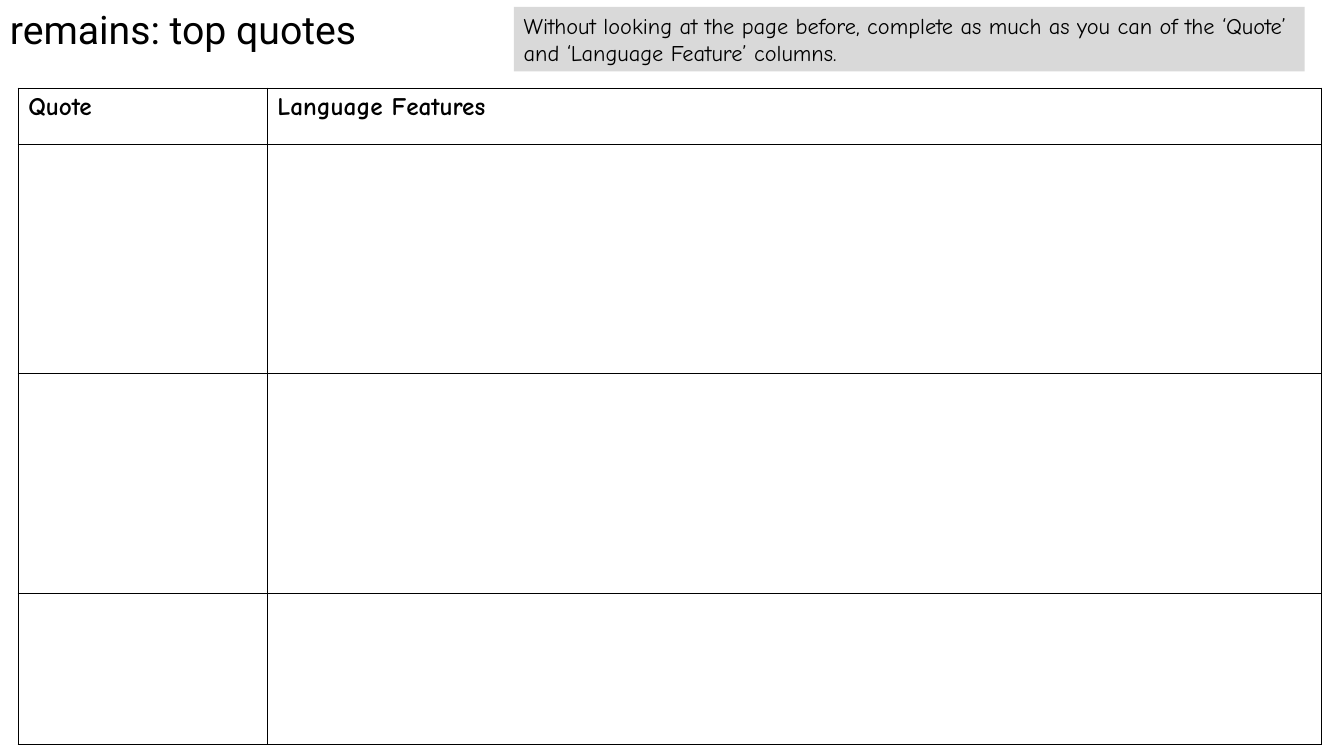
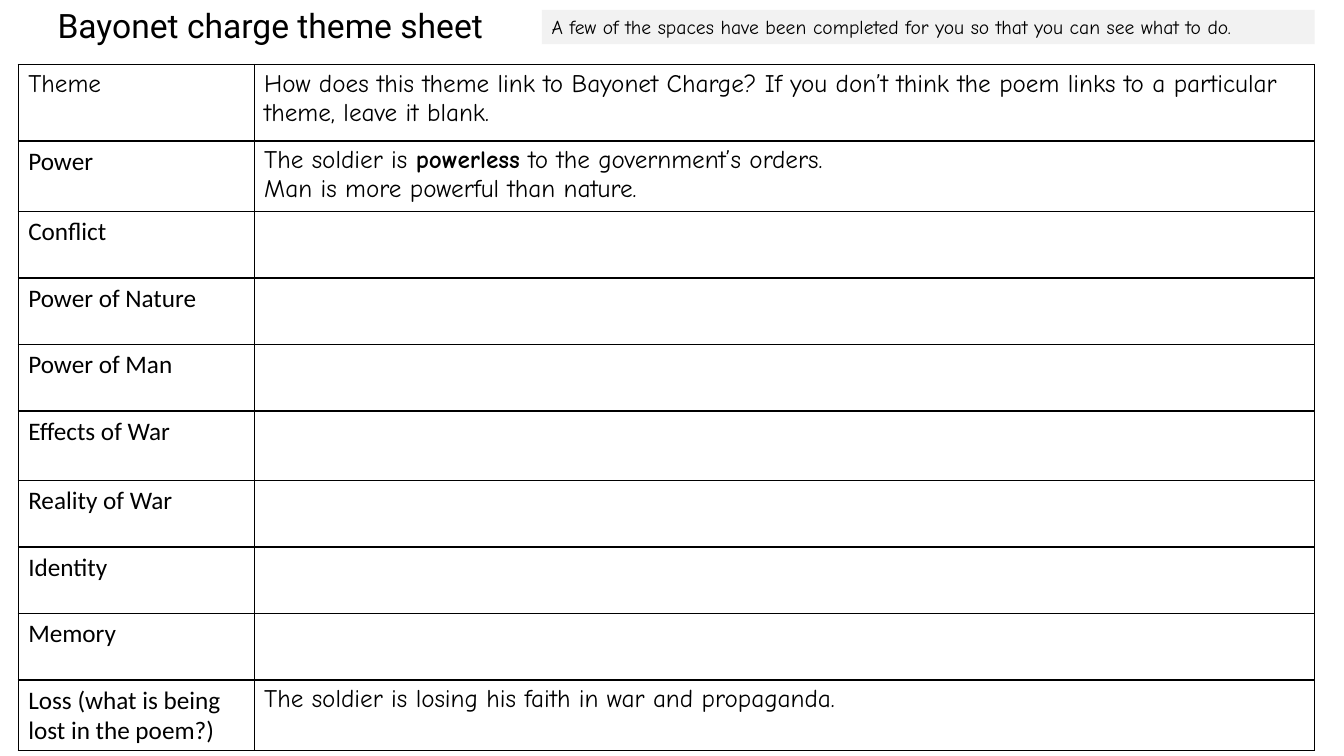
from itertools import product
from lxml.etree import SubElement
from pptx import Presentation
from pptx.dml.color import RGBColor
from pptx.enum.shapes import MSO_SHAPE as Shape
from pptx.enum.text import MSO_ANCHOR as Anchor, PP_ALIGN as Align
from pptx.oxml.ns import qn
from pptx.util import Pt

HAND, PLAIN, TITLE = "Comic Neue", "Calibri", "Roboto"
BLACK = "000000"
TABLE_LEFT, TABLE_SIZE = 13, 18

# Content: asterisks enclose bold words, a line break starts a paragraph
THEME_ROWS = [
    ("Theme", "How does this theme link to Bayonet Charge? If you don’t think "
     "the poem links to a particular theme, leave it blank."),
    ("Power", "The soldier is *powerless* to the government’s orders.\n"
     "Man is more powerful than nature."),
    ("Conflict", ""),
    ("Power of Nature", ""),
    ("Power of Man", ""),
    ("Effects of War", ""),
    ("Reality of War", ""),
    ("Identity", ""),
    ("Memory", ""),
    ("Loss (what is being lost in the poem?)",
     "The soldier is losing his faith in war and propaganda."),
]
SHEETS = [
    dict(title="remains: top quotes", title_box=(0, 0, 360, 41),
         title_size=28, title_align=Align.LEFT,
         note="Without looking at the page before, complete as much as you can "
              "of the ‘Quote’ and ‘Language Feature’ columns.",
         note_box=(367, 5, 565, 46), note_size=16, note_fill="D9D9D9",
         rows=[("*Quote*", "*Language Features*")] + [("", "")] * 3,
         top=63, widths=(178, 753), heights=(40, 164, 157, 108),
         label_font=HAND),
    dict(title="Bayonet charge theme sheet", title_box=(0, 0, 386, 36),
         title_size=24, title_align=Align.CENTER,
         note="A few of the spaces have been completed for you so that you can "
              "see what to do.",
         note_box=(387, 7, 552, 24.5), note_size=14, note_fill="F2F2F2",
         rows=THEME_ROWS,
         top=46, widths=(168.5, 757.5),
         heights=[54.7, 50.4] + [47.5] * 3 + [49.7] + [47.5] * 3 + [49.7],
         label_font=PLAIN),
]


def color(value):
    return RGBColor.from_string(value)


def write(frame, text, font, size, align=Align.LEFT):
    frame.word_wrap = True
    frame.text = ""
    for number, line in enumerate(text.split("\n")):
        para = frame.add_paragraph() if number else frame.paragraphs[0]
        para.alignment = align
        para.font.size = Pt(size)
        for index, words in enumerate(line.split("*")):
            if words:
                span = para.add_run()
                span.text = words
                span.font.name, span.font.size = font, Pt(size)
                span.font.bold = index % 2 == 1
                span.font.color.rgb = color(BLACK)


def add_borders(cell):
    properties = cell._tc.get_or_add_tcPr()
    for position, side in enumerate(("lnL", "lnR", "lnT", "lnB")):
        line = properties.makeelement(qn(f"a:{side}"), {"w": str(Pt(1))})
        fill = SubElement(line, qn("a:solidFill"))
        SubElement(fill, qn("a:srgbClr"), val=BLACK)
        properties.insert(position, line)


def add_title(page, sheet):
    box = page.shapes.add_textbox(*map(Pt, sheet["title_box"]))
    write(box.text_frame, sheet["title"], TITLE, sheet["title_size"],
          sheet["title_align"])


def add_note(page, sheet):
    box = page.shapes.add_shape(Shape.RECTANGLE, *map(Pt, sheet["note_box"]))
    box.shadow.inherit = False
    box.fill.solid()
    box.fill.fore_color.rgb = color(sheet["note_fill"])
    box.line.fill.background()
    box.text_frame.vertical_anchor = Anchor.TOP
    write(box.text_frame, sheet["note"], HAND, sheet["note_size"])


def add_grid(page, sheet):
    rows, widths, heights = sheet["rows"], sheet["widths"], sheet["heights"]
    table = page.shapes.add_table(
        len(rows), len(widths), Pt(TABLE_LEFT), Pt(sheet["top"]),
        Pt(sum(widths)), Pt(sum(heights))).table
    table.first_row = table.horz_banding = False
    for column, width in zip(table.columns, widths):
        column.width = Pt(width)
    for row, height in zip(table.rows, heights):
        row.height = Pt(height)
    for r, c in product(range(len(rows)), range(len(widths))):
        cell = table.cell(r, c)
        cell.fill.background()
        add_borders(cell)
        is_label = r > 0 and c == 0
        write(cell.text_frame, rows[r][c],
              sheet["label_font"] if is_label else HAND, TABLE_SIZE)


def main():
    deck = Presentation()
    deck.slide_width, deck.slide_height = Pt(960), Pt(540)
    for sheet in SHEETS:
        page = deck.slides.add_slide(deck.slide_layouts[6])
        add_title(page, sheet)
        add_grid(page, sheet)
        add_note(page, sheet)
    deck.save("out.pptx")


if __name__ == "__main__":
    main()
